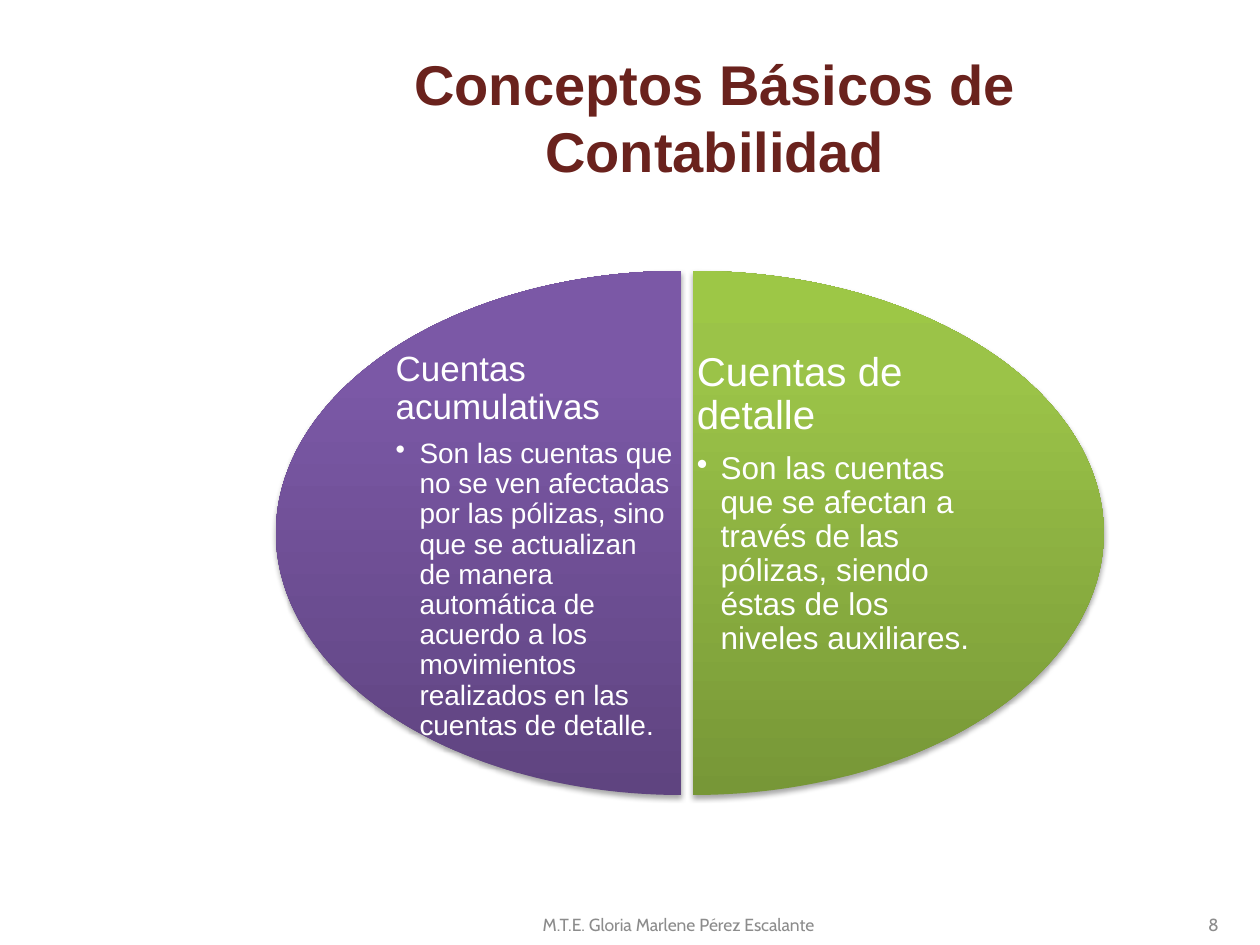
from copy import deepcopy

from lxml import etree
from pptx import Presentation
from pptx.dml.color import RGBColor
from pptx.enum import shapes, text
from pptx.oxml.ns import qn
from pptx.util import Inches, Pt

MAROON = RGBColor(0x6A, 0x22, 0x1D)
GRAY = RGBColor(0x8C, 0x8C, 0x8C)
WHITE = RGBColor(0xFF, 0xFF, 0xFF)
GREENS = [(0, RGBColor(0x77, 0x97, 0x37)), (0.8, RGBColor(0x9B, 0xC3, 0x48)),
          (1, RGBColor(0x9D, 0xC7, 0x46))]
PURPLES = [(0, RGBColor(0x5F, 0x44, 0x80)), (0.8, RGBColor(0x7B, 0x58, 0xA6)),
           (1, RGBColor(0x7C, 0x57, 0xA8))]
UP, DOWN = 162, 54


def write(paragraph, wording, *, size, color, font="Arial", bold=False,
          align=text.PP_ALIGN.LEFT, spacing=None, after=None, bullet=False):
    """Put formatted wording into a paragraph."""
    if bullet:
        props = paragraph._p.get_or_add_pPr()
        props.set("marL", str(Inches(0.19)))
        props.set("indent", str(-Inches(0.19)))
        etree.SubElement(props, qn("a:buChar"), char="•")
    paragraph.alignment = align
    if spacing is not None:
        paragraph.line_spacing = spacing
    if after is not None:
        paragraph.space_after = Pt(after)
    run = paragraph.add_run()
    run.text = wording
    run.font.size = Pt(size)
    run.font.name = font
    run.font.bold = bold
    run.font.color.rgb = color


def add_title(slide, wording):
    """Place and fill the title placeholder."""
    title = slide.shapes.title
    title.left, title.top = Inches(1.85), Inches(0.3)
    title.width, title.height = Inches(7.65), Inches(1.25)
    title.text_frame.vertical_anchor = text.MSO_ANCHOR.MIDDLE
    write(title.text_frame.paragraphs[0], wording, size=32, color=MAROON,
          bold=True, align=text.PP_ALIGN.CENTER)


def add_frame(slide, left, top, width, height):
    """Add a wrapping text box and return its text frame."""
    frame = slide.shapes.add_textbox(
        Inches(left), Inches(top), Inches(width), Inches(height)).text_frame
    frame.word_wrap = True
    return frame


def add_footer(slide, wording, left, width, align):
    """Add one footer entry."""
    frame = add_frame(slide, left, 7.14, width, 0.4)
    frame.vertical_anchor = text.MSO_ANCHOR.MIDDLE
    write(frame.paragraphs[0], wording, size=10, color=GRAY, font="Cabin",
          align=align)


def add_soft_shadow(shape):
    """Give a shape a short black shadow below it."""
    shape.shadow.inherit = False
    effects = shape._element.spPr.find(qn("a:effectLst"))
    shadow = etree.SubElement(
        effects, qn("a:outerShdw"), blurRad=str(Pt(3.1)), dist=str(Pt(1.8)),
        dir="5400000", rotWithShape="0")
    black = etree.SubElement(shadow, qn("a:srgbClr"), val="000000")
    etree.SubElement(black, qn("a:alpha"), val="35000")


def add_half(slide, left, width, angles, colors):
    """Add half an ellipse with a vertical gradient."""
    half = slide.shapes.add_shape(
        shapes.MSO_SHAPE.PIE, Inches(left), Inches(2.15), Inches(width),
        Inches(4.16))
    half.adjustments[0], half.adjustments[1] = angles
    half.line.fill.background()
    half.fill.gradient()
    half.fill.gradient_angle = 90
    stop_list = half._element.spPr.find(qn("a:gradFill")).find(qn("a:gsLst"))
    stop_list.append(deepcopy(stop_list[-1]))
    for stop, (position, color) in zip(half.fill.gradient_stops, colors):
        stop.position = position
        stop.color.rgb = color
    add_soft_shadow(half)


def add_concept(slide, left, width, heading, definition, heading_size, size):
    """Add a heading with its bulleted definition."""
    frame = add_frame(slide, left, 2.76, width, 2.92)
    frame.margin_left = frame.margin_right = Inches(0.03)
    frame.margin_top = frame.margin_bottom = Inches(0.03)
    write(frame.paragraphs[0], heading, size=heading_size, color=WHITE,
          spacing=0.9, after=0.35 * heading_size)
    write(frame.add_paragraph(), definition, size=size, color=WHITE,
          spacing=0.9, after=0.15 * size, bullet=True)


def main():
    """Build the slide and save it."""
    deck = Presentation()
    deck.slide_width, deck.slide_height = Inches(10), Inches(7.5)
    slide = deck.slides.add_slide(deck.slide_layouts[5])
    add_title(slide, "Conceptos Básicos de Contabilidad")
    add_footer(slide, "M.T.E. Gloria Marlene Pérez Escalante", 3.8, 3.17,
               text.PP_ALIGN.CENTER)
    add_footer(slide, "8", 7.44, 2.33, text.PP_ALIGN.RIGHT)
    add_half(slide, 2.24, 6.52, (UP, DOWN), GREENS)
    add_concept(slide, 5.5, 2.29, "Cuentas de detalle",
                "Son las cuentas que se afectan a través de las pólizas, "
                "siendo éstas de los niveles auxiliares.", 23, 18)
    add_half(slide, 2.19, 6.43, (DOWN, UP), PURPLES)
    add_concept(slide, 3.11, 2.26, "Cuentas acumulativas",
                "Son las cuentas que no se ven afectadas por las pólizas, "
                "sino que se actualizan de manera automática de acuerdo a los "
                "movimientos realizados en las cuentas de detalle.", 20, 16)
    deck.save("out.pptx")


if __name__ == "__main__":
    main()
